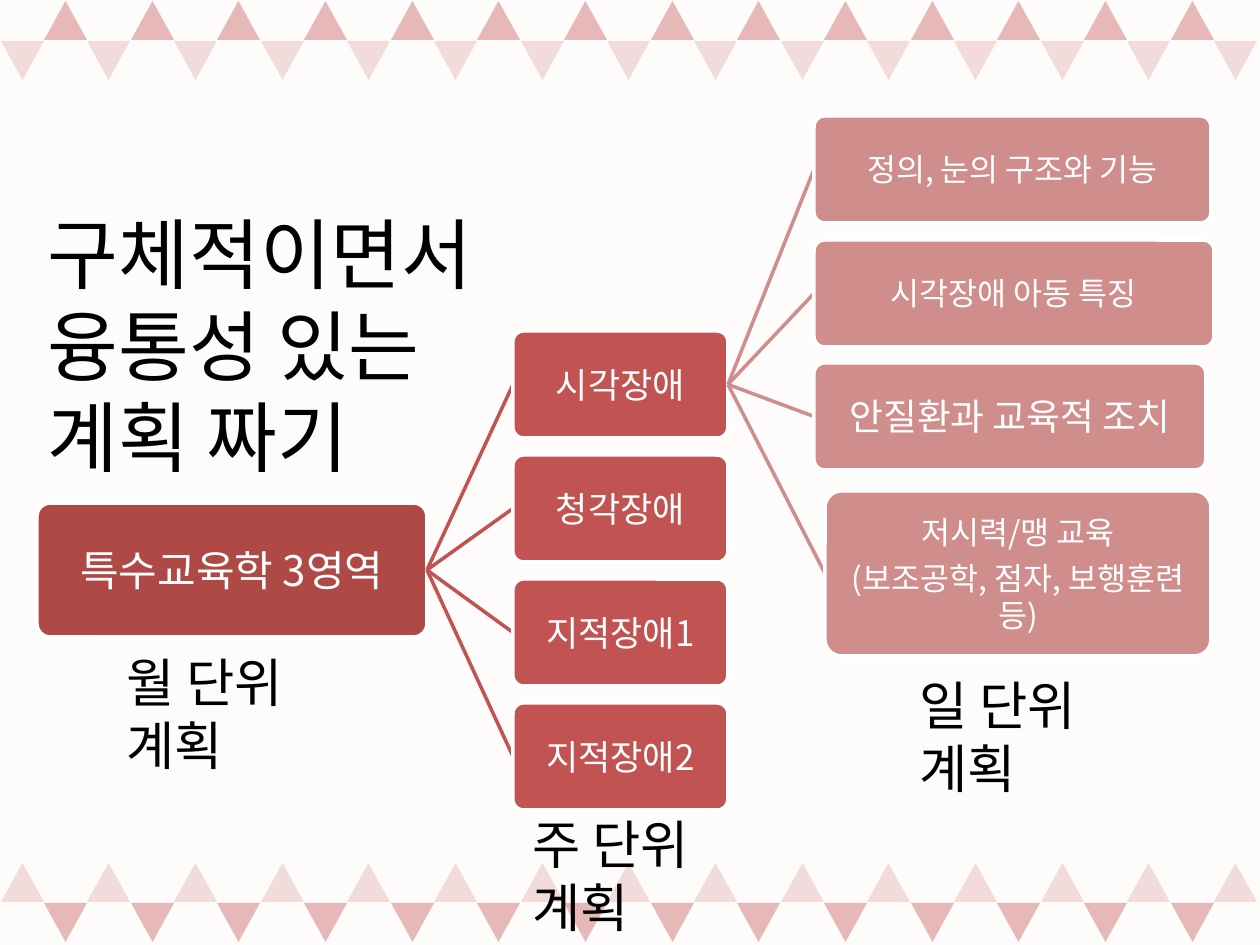
from pptx import Presentation
from pptx import util as u
from pptx.dml.color import RGBColor
from pptx.enum import shapes, text
from pptx.oxml.ns import qn
from lxml import etree

PX = u.Inches(1) // 126
FONT = "Noto Sans CJK KR"
BACKGROUND = RGBColor(0xFE, 0xFB, 0xFB)
PALE = RGBColor(0xF2, 0xDC, 0xDB)
PINK = RGBColor(0xE6, 0xB9, 0xB8)
MONTH = RGBColor(0xAE, 0x49, 0x46)
WEEK = RGBColor(0xC1, 0x54, 0x52)
DAY = RGBColor(0xCF, 0x8D, 0x8C)
WHITE = RGBColor(0xFF, 0xFF, 0xFF)
BLACK = RGBColor(0, 0, 0)


def write(box, lines, size, color, align, **frame_format):
    frame = box.text_frame
    for name, value in {"word_wrap": True, **frame_format}.items():
        setattr(frame, name, value)
    for index, line in enumerate(lines):
        para = frame.paragraphs[0] if index == 0 else frame.add_paragraph()
        para.alignment = align
        para.line_spacing = u.Pt(round(size * 1.19, 1))
        span = para.add_run()
        span.text = line
        for name, value in {"name": FONT, "size": u.Pt(size)}.items():
            setattr(span.font, name, value)
        span.font.color.rgb = color
        east_asian = etree.SubElement(span.font._element, qn("a:ea"))
        east_asian.set("typeface", FONT)


def add_node(place, lines, size, color, parent=None):
    node = page.shapes.add_shape(
        shapes.MSO_SHAPE.ROUNDED_RECTANGLE, *[n * PX for n in place])
    node.adjustments[0] = 0.1
    node.shadow.inherit = False
    node.fill.solid()
    node.fill.fore_color.rgb = color
    node.line.color.rgb = WHITE
    node.line.width = u.Pt(2)
    write(node, lines, size, WHITE, text.PP_ALIGN.CENTER,
          vertical_anchor=text.MSO_ANCHOR.MIDDLE, margin_left=PX,
          margin_right=PX, margin_top=PX, margin_bottom=PX)
    if parent is not None:
        link = page.shapes.add_connector(shapes.MSO_CONNECTOR.STRAIGHT, 0, 0, 0, 0)
        link.begin_connect(parent, 3)
        link.end_connect(node, 1)
        link.line.color.rgb = color
        link.line.width = u.Pt(2)
        etree.SubElement(link._element.spPr, qn("a:effectLst"))
        node._element.addprevious(link._element)
    return node


deck = Presentation()
deck.slide_width = 1260 * PX
deck.slide_height = 945 * PX
page = deck.slides.add_slide(deck.slide_layouts[5])
page.background.fill.solid()
page.background.fill.fore_color.rgb = BACKGROUND

for pale_top, pink_top, pale_turn, pink_turn in [(41, 1, 180, 0), (863, 903, 0, 180)]:
    for index in range(29):
        pale = index % 2 == 0
        triangle = page.shapes.add_shape(
            shapes.MSO_SHAPE.ISOSCELES_TRIANGLE, (1 + index * 130 // 3) * PX,
            (pale_top if pale else pink_top) * PX, 43 * PX, 39 * PX)
        triangle.rotation = pale_turn if pale else pink_turn
        triangle.shadow.inherit = False
        triangle.fill.solid()
        triangle.fill.fore_color.rgb = PALE if pale else PINK
        triangle.line.fill.background()

month = add_node((37, 503, 390, 134), ["특수교육학 3영역"], 24, MONTH)
weeks = [
    add_node((513, 331 + 124 * row, 215, 107), [subject], 20, WEEK, month)
    for row, subject in enumerate(["시각장애", "청각장애", "지적장애1", "지적장애2"])
]
for place, lines, size in [
    ((814, 116, 397, 107), ["정의, 눈의 구조와 기능"], 18),
    ((814, 240, 400, 107), ["시각장애 아동 특징"], 18),
    ((814, 363, 392, 107), ["안질환과 교육적 조치"], 21),
    ((825, 491, 386, 165), ["저시력/맹 교육", "(보조공학, 점자, 보행훈련 등)"], 18),
]:
    day = add_node(place, lines, size, DAY, weeks[0])
    for para in day.text_frame.paragraphs[1:]:
        para.space_before = u.Pt(5)

for left, top, label in [
    (114, 641, "월 단위 계획"), (520, 803, "주 단위 계획"), (907, 664, "일 단위 계획"),
]:
    box = page.shapes.add_textbox(left * PX, top * PX, 228 * PX, 77 * PX)
    write(box, [label], 30, BLACK, text.PP_ALIGN.LEFT, margin_top=10 * PX,
          auto_size=text.MSO_AUTO_SIZE.SHAPE_TO_FIT_TEXT)

title = page.shapes.title
for name, value in {"left": 35, "top": 106, "width": 469, "height": 199}.items():
    setattr(title, name, value * PX)
write(title, ["구체적이면서", "융통성 있는 계획 짜기"], 44, BLACK, text.PP_ALIGN.LEFT,
      vertical_anchor=text.MSO_ANCHOR.TOP, margin_top=101 * PX,
      auto_size=text.MSO_AUTO_SIZE.SHAPE_TO_FIT_TEXT)

deck.save("out.pptx")
